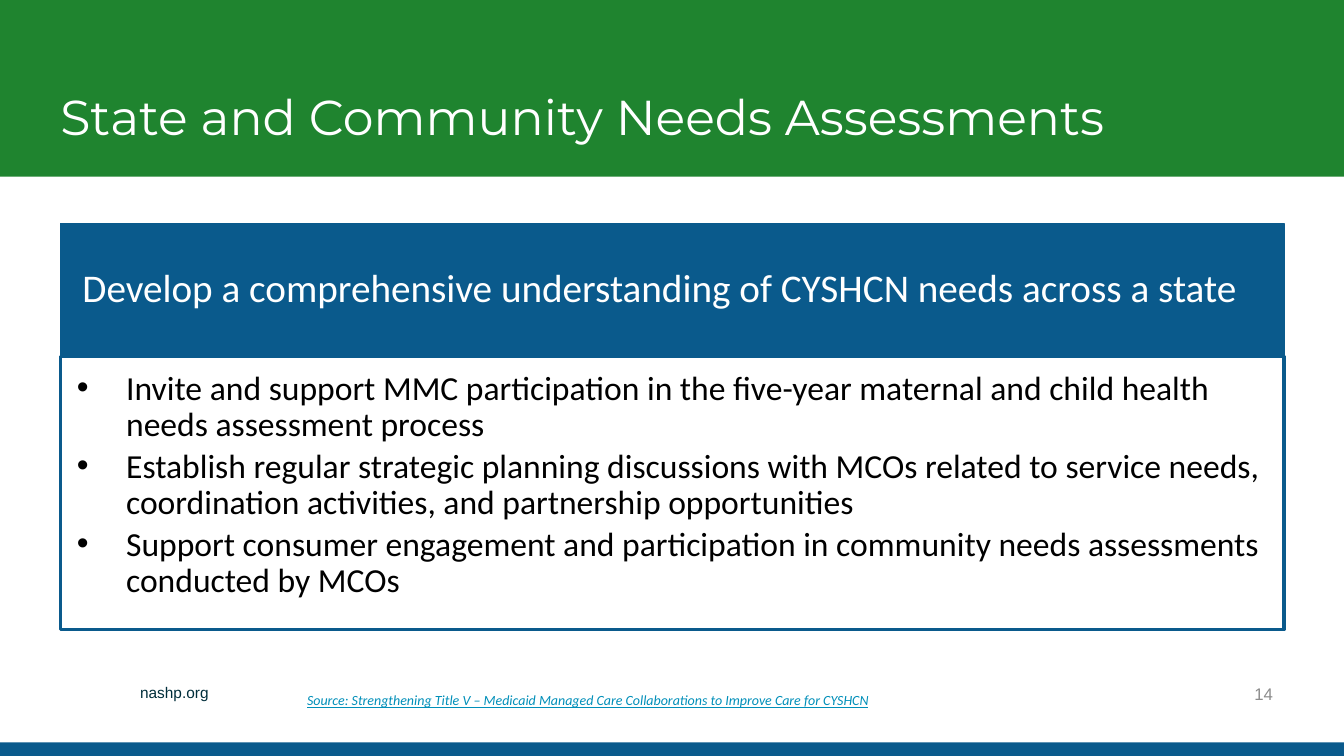
from lxml import etree
from pptx import Presentation
from pptx.dml.color import RGBColor
from pptx.enum.shapes import MSO_SHAPE
from pptx.enum.text import MSO_ANCHOR, PP_ALIGN
from pptx.oxml.ns import qn
from pptx.util import Cm, Pt

RECT = MSO_SHAPE.RECTANGLE
TOP, MIDDLE, BOTTOM = MSO_ANCHOR.TOP, MSO_ANCHOR.MIDDLE, MSO_ANCHOR.BOTTOM
LEFT, RIGHT = PP_ALIGN.LEFT, PP_ALIGN.RIGHT

# Content
TITLE = "State and Community Needs Assessments"
GOAL = "Develop a comprehensive understanding of CYSHCN needs across a state"
ACTIONS = [
    "Invite and support MMC participation in the five-year maternal and child health needs assessment process",
    "Establish regular strategic planning discussions with MCOs related to service needs, "
    "coordination activities, and partnership opportunities",
    "Support consumer engagement and participation in community needs assessments conducted by MCOs",
]
SITE = "nashp.org"
SOURCE = "Source: Strengthening Title V – Medicaid Managed Care Collaborations to Improve Care for CYSHCN"
PAGE = "14"

COLORS = {
    "green": "1F842F", "blue": "0A5A8C", "white": "FFFFFF", "black": "000000",
    "site": "002E3B", "page": "8C8C8C", "link": "008FB9",
}

# Layout in centimetres
SLIDE_W, SLIDE_H = 33.87, 19.05
HEADER_H, FOOTER_H = 4.45, 0.34
MARGIN, CONTENT_W = 1.52, 30.84
GOAL_TOP, GOAL_H, ACTIONS_H = 5.64, 3.35, 6.88
DEFAULT_INSETS = (0.25, 0.13, 0.25, 0.13)

prs = Presentation()
prs.slide_width, prs.slide_height = Cm(SLIDE_W), Cm(SLIDE_H)
slide = prs.slides.add_slide(prs.slide_layouts[6])


def color(name):
    return RGBColor.from_string(COLORS[name])


def add_panel(left, top, width, height, fill=None, line=None, line_width=1):
    panel = slide.shapes.add_shape(RECT, Cm(left), Cm(top), Cm(width), Cm(height))
    panel.shadow.inherit = False
    if fill:
        panel.fill.solid()
        panel.fill.fore_color.rgb = color(fill)
    else:
        panel.fill.background()
    if line:
        panel.line.color.rgb = color(line)
        panel.line.width = Pt(line_width)
    else:
        panel.line.fill.background()
    return panel


def add_label(left, top, width, height):
    return slide.shapes.add_textbox(Cm(left), Cm(top), Cm(width), Cm(height))


def add_bullet(paragraph):
    props = paragraph._p.get_or_add_pPr()
    props.set("marL", str(Cm(1.3)))
    props.set("indent", str(Cm(-1.24)))
    etree.SubElement(props, qn("a:buFont")).set("typeface", "Arial")
    etree.SubElement(props, qn("a:buChar")).set("char", "•")


def write(box, lines, font, size, ink, anchor=TOP, align=LEFT, insets=DEFAULT_INSETS,
          spacing=None, after=0, bullets=False, link=False):
    frame = box.text_frame
    frame.word_wrap = True
    frame.vertical_anchor = anchor
    (frame.margin_left, frame.margin_top,
     frame.margin_right, frame.margin_bottom) = map(Cm, insets)
    for i, line in enumerate(lines):
        paragraph = frame.paragraphs[0] if i == 0 else frame.add_paragraph()
        paragraph.text = line
        if bullets:
            add_bullet(paragraph)
        paragraph.alignment = align
        paragraph.line_spacing = spacing
        paragraph.space_after = Pt(after)
        paragraph.font.name = font
        paragraph.font.size = Pt(size)
        paragraph.font.color.rgb = color(ink)
        if link:
            paragraph.font.italic = paragraph.font.underline = True


# Header and footer bands
add_panel(0, 0, SLIDE_W, HEADER_H, "green")
add_panel(0, SLIDE_H - FOOTER_H, SLIDE_W, FOOTER_H, "blue")

# Title
write(add_label(MARGIN, 0.56, CONTENT_W, 3.25), [TITLE], "Montserrat", 35, "white",
      anchor=BOTTOM, insets=(0, 0.13, 0.25, 0.13), spacing=0.9)

# Goal with its list of actions
goal = add_panel(MARGIN, GOAL_TOP, CONTENT_W, GOAL_H, "blue", "blue")
write(goal, [GOAL], "Calibri", 28, "white", anchor=MIDDLE,
      insets=(0.56, 0.3, 0.56, 0.3), spacing=0.9)
actions = add_panel(MARGIN, GOAL_TOP + GOAL_H, CONTENT_W, ACTIONS_H, line="blue", line_width=2.25)
write(actions, ACTIONS, "Calibri", 24, "black", insets=(0.36, 0.36, 0.48, 0.53),
      spacing=0.9, after=4, bullets=True)

# Footer texts
write(add_label(3.28, 17.09, 15.93, 0.74), [SITE], "Arial", 11, "site")
write(add_label(24.56, 16.97, 7.77, 1.02), [PAGE], "Arial", 12, "page", anchor=MIDDLE, align=RIGHT)
write(add_label(7.49, 17.3, 23.93, 0.69), [SOURCE], "Calibri", 10, "link", link=True)

prs.save("out.pptx")
